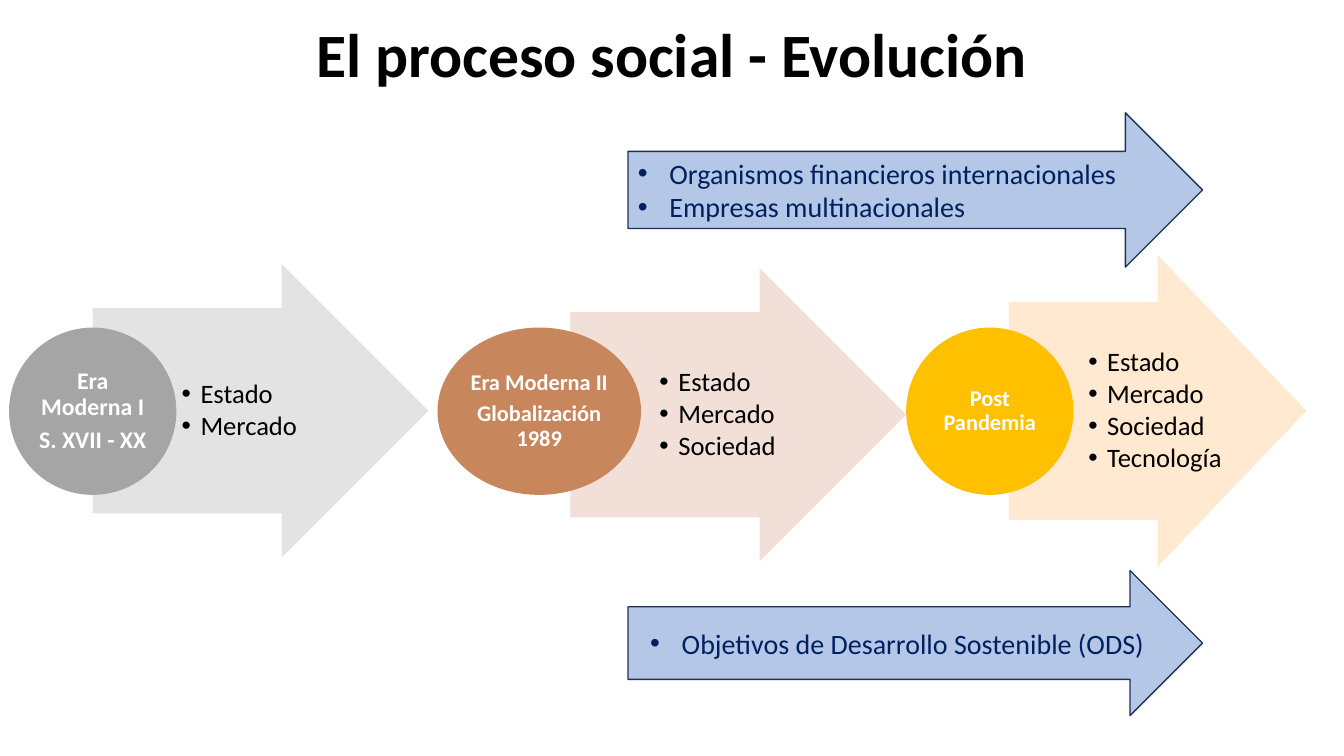
from lxml.etree import SubElement
from pptx import Presentation
from pptx.dml.color import RGBColor
from pptx.enum.shapes import MSO_SHAPE
from pptx.enum.text import MSO_ANCHOR, PP_ALIGN
from pptx.oxml.ns import qn
from pptx.util import Pt

COLORS = {
    "black": "000000", "white": "FFFFFF", "navy": "002060",
    "sky": "B4C7E7", "edge": "1E3256",
    "gray": "A5A5A5", "mist": "E3E3E3",
    "clay": "C8865C", "blush": "F2DFD8",
    "gold": "FFC000", "cream": "FFE9D0",
}

STAGES = [
    ((66.2, 188.6, 239.8, 209.5), (6.5, 119.5), "mist", "gray", 17,
     ["Era Moderna I", "S. XVII - XX"], ["Estado", "Mercado"]),
    ((407.5, 191.5, 239.8, 209.5), (312.5, 145.4), "blush", "clay", 16,
     ["Era Moderna II", "Globalización 1989"],
     ["Estado", "Mercado", "Sociedad"]),
    ((720.7, 182.2, 212.4, 222.5), (647.3, 119.5), "cream", "gold", 16,
     ["Post Pandemia"], ["Estado", "Mercado", "Sociedad", "Tecnología"]),
]


def color(name):
    return RGBColor.from_string(COLORS[name])


def set_frame(shape, inset):
    frame = shape.text_frame
    frame.word_wrap = True
    frame.vertical_anchor = MSO_ANCHOR.MIDDLE
    left, top, right, bottom = inset
    frame.margin_left, frame.margin_top = Pt(left), Pt(top)
    frame.margin_right, frame.margin_bottom = Pt(right), Pt(bottom)
    return frame


def add_bullet(para, indent):
    props = para._p.get_or_add_pPr()
    props.set("marL", str(Pt(indent)))
    props.set("indent", str(-Pt(indent)))
    SubElement(props, qn("a:buFont")).set("typeface", "Arial")
    SubElement(props, qn("a:buChar")).set("char", "•")


def write(frame, lines, size, ink, bold=False, align=PP_ALIGN.LEFT,
          line=1.0, after=0, indent=0):
    for index, words in enumerate(lines):
        para = frame.paragraphs[0] if index == 0 else frame.add_paragraph()
        para.alignment = align
        para.line_spacing = line
        para.space_after = Pt(after)
        if indent:
            add_bullet(para, indent)
        run = para.add_run()
        run.text = words
        run.font.name = "Calibri"
        run.font.size = Pt(size)
        run.font.bold = bold
        run.font.color.rgb = color(ink)


def add_form(slide, kind, box, fill, edge=None):
    shape = slide.shapes.add_shape(kind, *map(Pt, box))
    shape.shadow.inherit = False
    shape.fill.solid()
    shape.fill.fore_color.rgb = color(fill)
    if edge:
        shape.line.color.rgb = color(edge)
        shape.line.width = Pt(1)
    else:
        shape.line.fill.background()
    return shape


def add_title(slide, words):
    box = slide.shapes.add_textbox(Pt(66), Pt(12.2), Pt(828), Pt(58.3))
    write(set_frame(box, (7.2, 3.6, 7.2, 3.6)), [words], 44, "black",
          bold=True, align=PP_ALIGN.CENTER, line=0.9)


def add_stage(slide, box, disc, pale, deep, size, names, items):
    left, top, width, height = box
    arrow = add_form(slide, MSO_SHAPE.RIGHT_ARROW, box, pale)
    arrow.adjustments[0] = 0.7
    arrow.adjustments[1] = 0.5
    label = slide.shapes.add_textbox(
        Pt(left + width / 4), Pt(top + height * 0.15),
        Pt(width * 0.49), Pt(height * 0.7))
    write(set_frame(label, (3.6, 0.7, 2.2, 0.7)), items, 19, "black",
          line=0.9, after=2.5, indent=13.5)
    start, span = disc
    circle = add_form(slide, MSO_SHAPE.OVAL, (start, 234, span, 119.5), deep)
    write(set_frame(circle, (0.7, 0.7, 0.7, 0.7)), names, size, "white",
          bold=True, align=PP_ALIGN.CENTER, line=0.9, after=5)


def add_force(slide, top, height, items, align):
    arrow = add_form(slide, MSO_SHAPE.RIGHT_ARROW,
                     (448.6, top, 410.4, height), "sky", "edge")
    write(set_frame(arrow, (7.2, 3.6, 7.2, 3.6)), items, 20, "navy",
          align=align, indent=22.5)


def main():
    deck = Presentation()
    deck.slide_width, deck.slide_height = Pt(960), Pt(540)
    slide = deck.slides.add_slide(deck.slide_layouts[6])
    add_title(slide, "El proceso social - Evolución")
    for stage in STAGES:
        add_stage(slide, *stage)
    add_force(slide, 80.6, 110.2,
              ["Organismos financieros internacionales",
               "Empresas multinacionales"], PP_ALIGN.LEFT)
    add_force(slide, 407.5, 103.7,
              ["Objetivos de Desarrollo Sostenible (ODS)"], PP_ALIGN.CENTER)
    deck.save("out.pptx")


if __name__ == "__main__":
    main()
